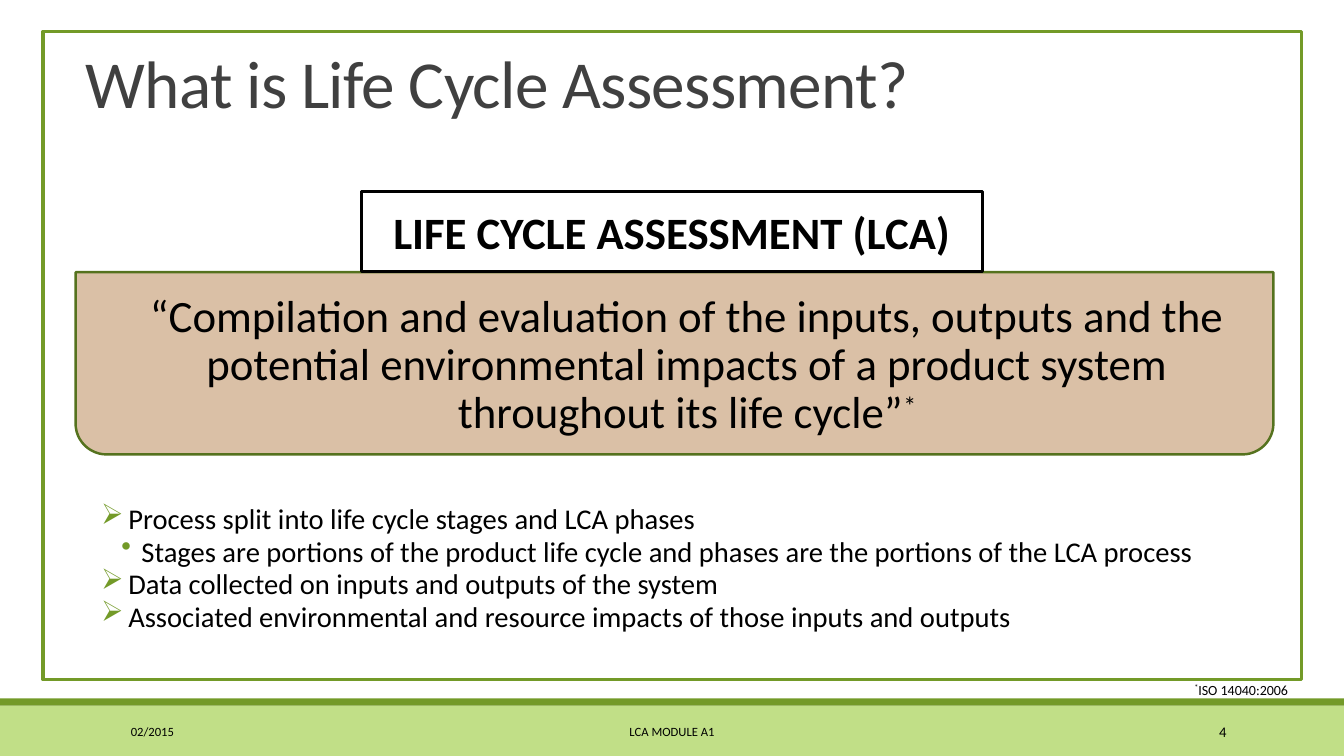
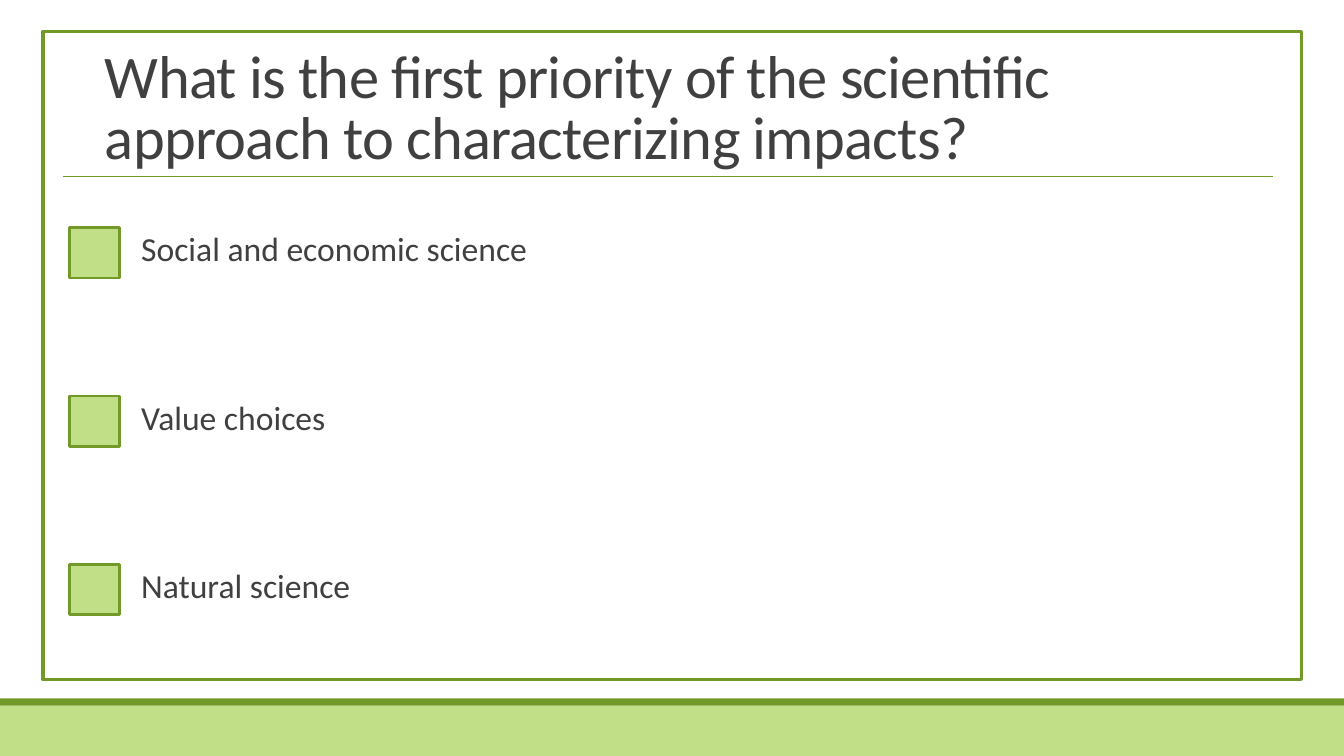
"""Two life cycle assessment slides laid out on a grid of 160 columns by 90 rows."""
from dataclasses import dataclass
from typing import NamedTuple

from lxml import etree
from pptx import Presentation, util as u
from pptx.dml import color
from pptx.enum import shapes, text
from pptx.oxml import ns

COLUMNS, ROWS = 160, 90
WIDTH, HEIGHT = u.Inches(13.33), u.Inches(7.5)
FONT = "Calibri"
GREEN, PALE_GREEN, DARK_GREEN = "739A28", "C1DF87", "55721E"
TAN, BLACK, GREY = "DAC0A6", "000000", "404040"
LEFT, CENTER, RIGHT = text.PP_ALIGN.LEFT, text.PP_ALIGN.CENTER, text.PP_ALIGN.RIGHT
TOP, MIDDLE, BOTTOM = text.MSO_ANCHOR.TOP, text.MSO_ANCHOR.MIDDLE, text.MSO_ANCHOR.BOTTOM
RECTANGLE = shapes.MSO_SHAPE.RECTANGLE
INSETS = (0.1, 0.05, 0.1, 0.05)
FLUSH = (0, 0.05, 0, 0.05)


class Area(NamedTuple):
    """A rectangle in grid columns and rows."""
    left: float
    top: float
    width: float
    height: float


class Piece(NamedTuple):
    """A stretch of text that may be raised."""
    words: str
    raised: bool = False


class Bullet(NamedTuple):
    """A bullet sign with its text margin and hanging indent in inches."""
    sign: str
    margin: float
    hang: float


@dataclass(frozen=True)
class Line:
    """One paragraph and its optional bullet."""
    pieces: tuple[Piece, ...]
    bullet: Bullet | None = None


@dataclass(frozen=True)
class FooterItem:
    """One entry of the footer band."""
    words: str
    left: float
    width: float
    align: text.PP_ALIGN
    size: float = 9


ARROW = Bullet("➢", 0.69, 0.27)
DOT = Bullet("•", 0.82, 0.2)
FOOTER = (
    FooterItem("02/2015", 14.4, 32.4, LEFT),
    FooterItem("LCA MODULE A1", 48.4, 63.2, CENTER),
    FooterItem("4", 130, 17.2, RIGHT, 10.5),
)
POINTS = (
    ("Process split into life cycle stages and LCA phases", ARROW),
    ("Stages are portions of the product life cycle and phases are the portions "
     "of the LCA process", DOT),
    ("Data collected on inputs and outputs of the system", ARROW),
    ("Associated environmental and resource impacts of those inputs and outputs", ARROW),
)
ANSWERS = ("Social and economic science", "Value choices", "Natural science")
ANSWER_TOP, ANSWER_STEP, CHECKBOX = 27.1, 20.05, 6


def rgb(code: str) -> color.RGBColor:
    """Turn a hex string into a colour."""
    return color.RGBColor.from_string(code)


def across(columns: float) -> int:
    """Convert columns to a length."""
    return round(WIDTH * columns / COLUMNS)


def down(rows: float) -> int:
    """Convert rows to a length."""
    return round(HEIGHT * rows / ROWS)


def place(area: Area) -> tuple[int, int, int, int]:
    """Convert an area to left, top, width and height."""
    return across(area.left), down(area.top), across(area.width), down(area.height)


def plain(words: str, bullet: Bullet | None = None) -> Line:
    """Make a line with a single piece."""
    return Line((Piece(words),), bullet)


def add_bullet(paragraph, bullet: Bullet) -> None:
    """Give a paragraph a green bullet and a hanging indent."""
    properties = paragraph._p.get_or_add_pPr()
    properties.set("marL", str(u.Inches(bullet.margin)))
    properties.set("indent", str(-u.Inches(bullet.hang)))
    tint = etree.SubElement(properties, ns.qn("a:buClr"))
    etree.SubElement(tint, ns.qn("a:srgbClr")).set("val", GREEN)
    etree.SubElement(properties, ns.qn("a:buChar")).set("char", bullet.sign)


def write(frame, *lines: Line, size: float, ink: str = BLACK, bold: bool = False,
          align=LEFT, anchor=TOP, spacing: float = 1, before: float = 0,
          after: float = 0, tracking: float = 0, insets=INSETS) -> None:
    """Fill a text frame with formatted lines."""
    frame.word_wrap = True
    frame.auto_size = text.MSO_AUTO_SIZE.NONE
    frame.vertical_anchor = anchor
    frame.margin_left, frame.margin_top, frame.margin_right, frame.margin_bottom = map(
        u.Inches, insets)
    for index, line in enumerate(lines):
        paragraph = frame.add_paragraph() if index else frame.paragraphs[0]
        if line.bullet:
            add_bullet(paragraph, line.bullet)
        paragraph.alignment = align
        paragraph.line_spacing = spacing
        paragraph.space_before = u.Pt(before if index else 0)
        paragraph.space_after = u.Pt(after)
        for piece in line.pieces:
            run = paragraph.add_run()
            run.text = piece.words
            run.font.name, run.font.size, run.font.bold = FONT, u.Pt(size), bold
            run.font.color.rgb = rgb(ink)
            if piece.raised:
                run._r.get_or_add_rPr().set("baseline", "30000")
            if tracking:
                run._r.get_or_add_rPr().set("spc", str(round(tracking * 100)))


def add_text(slide, area: Area, *lines: Line, **style) -> None:
    """Add a text box."""
    write(slide.shapes.add_textbox(*place(area)).text_frame, *lines, **style)


def add_block(slide, area: Area, kind=RECTANGLE, fill: str | None = None,
              edge: str | None = None, weight: float = 1):
    """Add a preset shape with a flat fill and edge."""
    block = slide.shapes.add_shape(kind, *place(area))
    block.shadow.inherit = False
    if fill:
        block.fill.solid()
        block.fill.fore_color.rgb = rgb(fill)
    else:
        block.fill.background()
    if edge:
        block.line.color.rgb = rgb(edge)
        block.line.width = u.Pt(weight)
    else:
        block.line.fill.background()
    return block


def start_slide(deck, heading: str, area: Area, size: float):
    """Add a slide with the shared bands, frame and title style."""
    slide = deck.slides.add_slide(deck.slide_layouts[5])
    add_block(slide, Area(0, 84, COLUMNS, 6), fill=PALE_GREEN)
    add_block(slide, Area(0, 83.15, COLUMNS, 0.85), fill=GREEN)
    add_block(slide, Area(5.15, 3.75, 149.8, 77.15), edge=GREEN, weight=2.5)
    title = slide.shapes.title
    title.left, title.top, title.width, title.height = place(area)
    write(title.text_frame, plain(heading), size=size, ink=GREY, anchor=BOTTOM,
          spacing=0.85, tracking=-0.5)
    return slide


def build_definition(deck) -> None:
    """Build the slide that defines life cycle assessment."""
    slide = start_slide(deck, "What is Life Cycle Assessment?", Area(9, 3.6, 132, 11.6), 48)
    definition = add_block(slide, Area(9, 32.4, 142.6, 21.7),
                           shapes.MSO_SHAPE.ROUND_2_SAME_RECTANGLE, TAN, DARK_GREEN, 1.75)
    definition.adjustments[0], definition.adjustments[1] = 0, 0.17
    quotation = Line((
        Piece("“Compilation and evaluation of the inputs, outputs and the potential "
              "environmental impacts of a product system throughout its life cycle”"),
        Piece("*", raised=True)))
    write(definition.text_frame, quotation, size=32, align=CENTER, spacing=0.9,
          insets=(0.25, 0.21, 0, 0.05))
    term = add_block(slide, Area(43, 22.8, 74, 9.5), edge=BLACK, weight=2)
    write(term.text_frame, plain("LIFE CYCLE ASSESSMENT (LCA)"), size=32, bold=True,
          align=CENTER, anchor=MIDDLE)
    add_text(slide, Area(7, 60.2, 143.3, 16.2), *(plain(*point) for point in POINTS),
             size=20.4, spacing=0.7, before=2, after=4, insets=FLUSH)
    add_text(slide, Area(141, 80.5, 19, 3.2),
             Line((Piece("*", raised=True), Piece("ISO 14040:2006"))), size=10)
    for item in FOOTER:
        add_text(slide, Area(item.left, 84.7, item.width, 4.8), plain(item.words),
                 size=item.size, align=item.align, anchor=MIDDLE)


def build_question(deck) -> None:
    """Build the slide that asks a question with three answers."""
    slide = start_slide(
        deck, "What is the first priority of the scientific approach to characterizing impacts?",
        Area(11.3, 5, 135.4, 16.1), 43.2)
    rule = slide.shapes.add_connector(shapes.MSO_CONNECTOR.STRAIGHT, across(7.5), down(21),
                                      across(151.5), down(21))
    rule.line.color.rgb = rgb(GREEN)
    rule.line.width = u.Pt(1)
    etree.SubElement(rule._element.spPr, ns.qn("a:effectLst"))
    for index, answer in enumerate(ANSWERS):
        top = ANSWER_TOP + index * ANSWER_STEP
        add_block(slide, Area(8.25, top, CHECKBOX, CHECKBOX), fill=PALE_GREEN,
                  edge=GREEN, weight=2)
        add_text(slide, Area(16.8, top, 129.8, 6.5), plain(answer), size=24, ink=GREY,
                 spacing=0.9, after=2, insets=FLUSH)


def main() -> None:
    """Build and save the presentation."""
    deck = Presentation()
    deck.slide_width, deck.slide_height = WIDTH, HEIGHT
    build_definition(deck)
    build_question(deck)
    deck.save("out.pptx")


if __name__ == "__main__":
    main()
